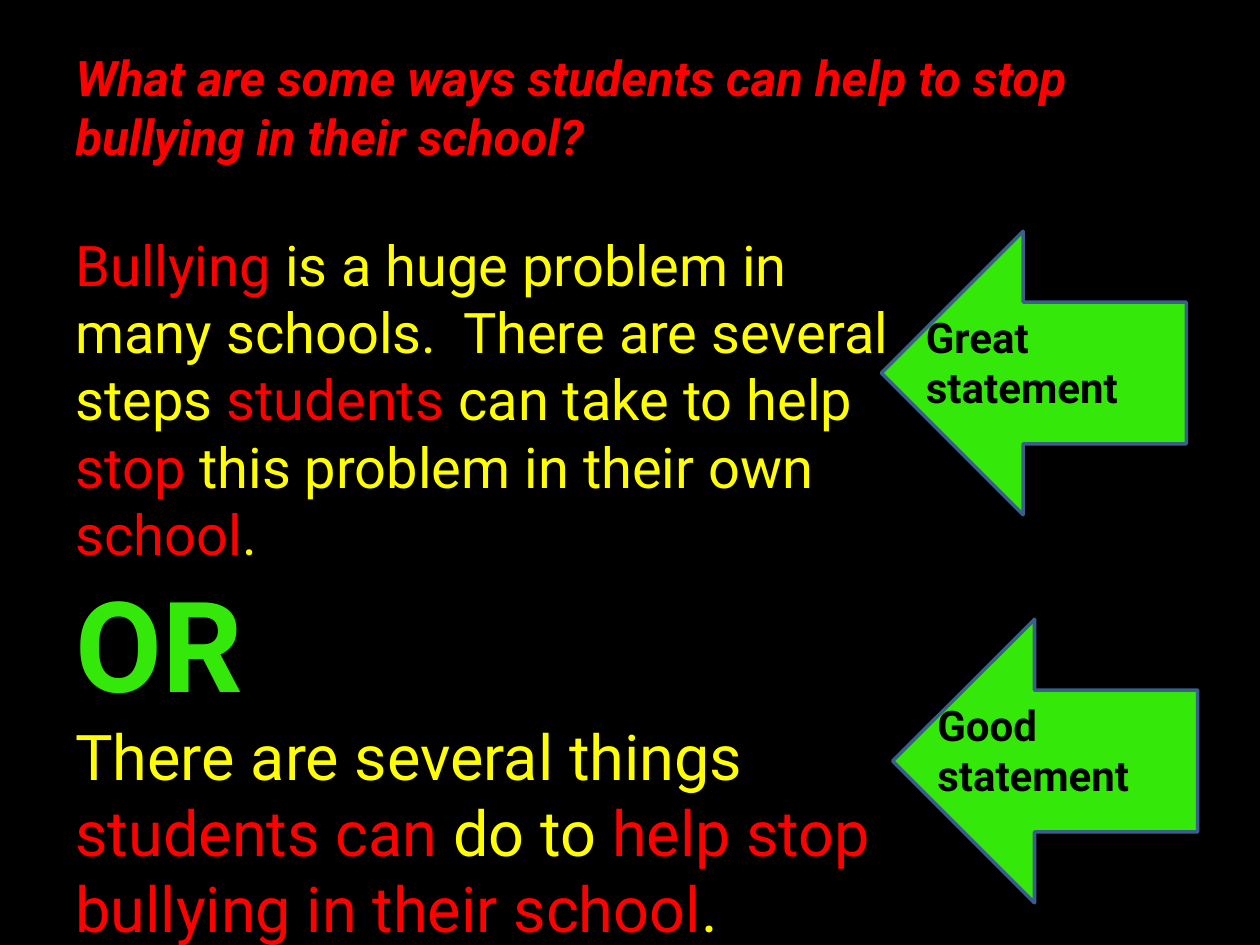
from dataclasses import dataclass

from pptx import Presentation
from pptx.dml.color import RGBColor
from pptx.enum.shapes import MSO_SHAPE
from pptx.enum.text import MSO_ANCHOR, MSO_AUTO_SIZE, PP_ALIGN
from pptx.util import Inches, Pt

FONT = "Roboto"
BLACK, RED, YELLOW, GREEN, EDGE = "000000", "FF0000", "FFFF00", "34E909", "3A5F8C"


@dataclass(frozen=True)
class Verdict:
    left: float
    top: float
    lines: tuple[str, ...]


VERDICTS = (
    Verdict(7.08, 1.75, ("Great statement",)),
    Verdict(7.17, 4.83, ("Good", "statement")),
)

# Words repeated from the question are red, the rest yellow
GREAT_ANSWER = (
    ("Bullying", RED),
    (" is a huge problem in many schools.  There are several steps ", YELLOW),
    ("students", RED),
    (" can take to help ", YELLOW),
    ("stop", RED),
    (" this problem in their own ", YELLOW),
    ("school", RED),
    (".", YELLOW),
)
GOOD_ANSWER = (
    ("There are several things ", YELLOW),
    ("students can", RED),
    (" do to ", YELLOW),
    ("help stop bullying in their school", RED),
    (".", YELLOW),
)


def rgb(color: str) -> RGBColor:
    return RGBColor.from_string(color)


def add_text(paragraph, text: str, *, size: float, color: str,
             bold: bool = False, italic: bool = False) -> None:
    paragraph.alignment = PP_ALIGN.LEFT
    run = paragraph.add_run()
    run.text = text
    font = run.font
    font.name, font.size, font.bold, font.italic = FONT, Pt(size), bold, italic
    font.color.rgb = rgb(color)


def prepare_frame(shape):
    frame = shape.text_frame
    frame.word_wrap = True
    frame.auto_size = MSO_AUTO_SIZE.SHAPE_TO_FIT_TEXT
    frame.vertical_anchor = MSO_ANCHOR.TOP
    return frame


def add_frame(slide, left: float, top: float, width: float, height: float):
    return prepare_frame(slide.shapes.add_textbox(
        Inches(left), Inches(top), Inches(width), Inches(height)))


def add_verdict(slide, verdict: Verdict) -> None:
    arrow = slide.shapes.add_shape(
        MSO_SHAPE.DOWN_ARROW, Inches(verdict.left), Inches(verdict.top),
        Inches(2.25), Inches(2.42))
    arrow.rotation = 90
    arrow.shadow.inherit = False
    arrow.fill.solid()
    arrow.fill.fore_color.rgb = rgb(GREEN)
    arrow.line.color.rgb = rgb(EDGE)
    arrow.line.width = Pt(2)

    label = add_frame(slide, verdict.left + 0.17, verdict.top + 0.67, 1.92, 0.91)
    for index, line in enumerate(verdict.lines):
        paragraph = label.add_paragraph() if index else label.paragraphs[0]
        add_text(paragraph, line, size=24, color=BLACK, bold=True)


def main() -> None:
    prs = Presentation()
    prs.slide_width, prs.slide_height = Inches(10), Inches(7.5)
    slide = prs.slides.add_slide(prs.slide_layouts[5])
    slide.background.fill.solid()
    slide.background.fill.fore_color.rgb = rgb(BLACK)

    # Question
    question = slide.shapes.title
    question.left, question.top = Inches(0.5), Inches(0.33)
    question.width, question.height = Inches(9.17), Inches(1.04)
    add_text(prepare_frame(question).paragraphs[0],
             "What are some ways students can help to stop bullying in their school?",
             size=28, color=RED, bold=True, italic=True)

    # Two sample answers, started one line below the top of their box
    answers = add_frame(slide, 0.5, 1.25, 6.92, 6.97)
    answers.margin_top = Inches(0.58)
    great = answers.paragraphs[0]
    for text, color in GREAT_ANSWER:
        add_text(great, text, size=32, color=color)
    add_text(answers.add_paragraph(), "OR", size=72, color=GREEN, bold=True)
    good = answers.add_paragraph()
    for text, color in GOOD_ANSWER:
        add_text(good, text, size=36, color=color)

    # Verdict arrows
    for verdict in VERDICTS:
        add_verdict(slide, verdict)

    prs.save("out.pptx")


if __name__ == "__main__":
    main()
